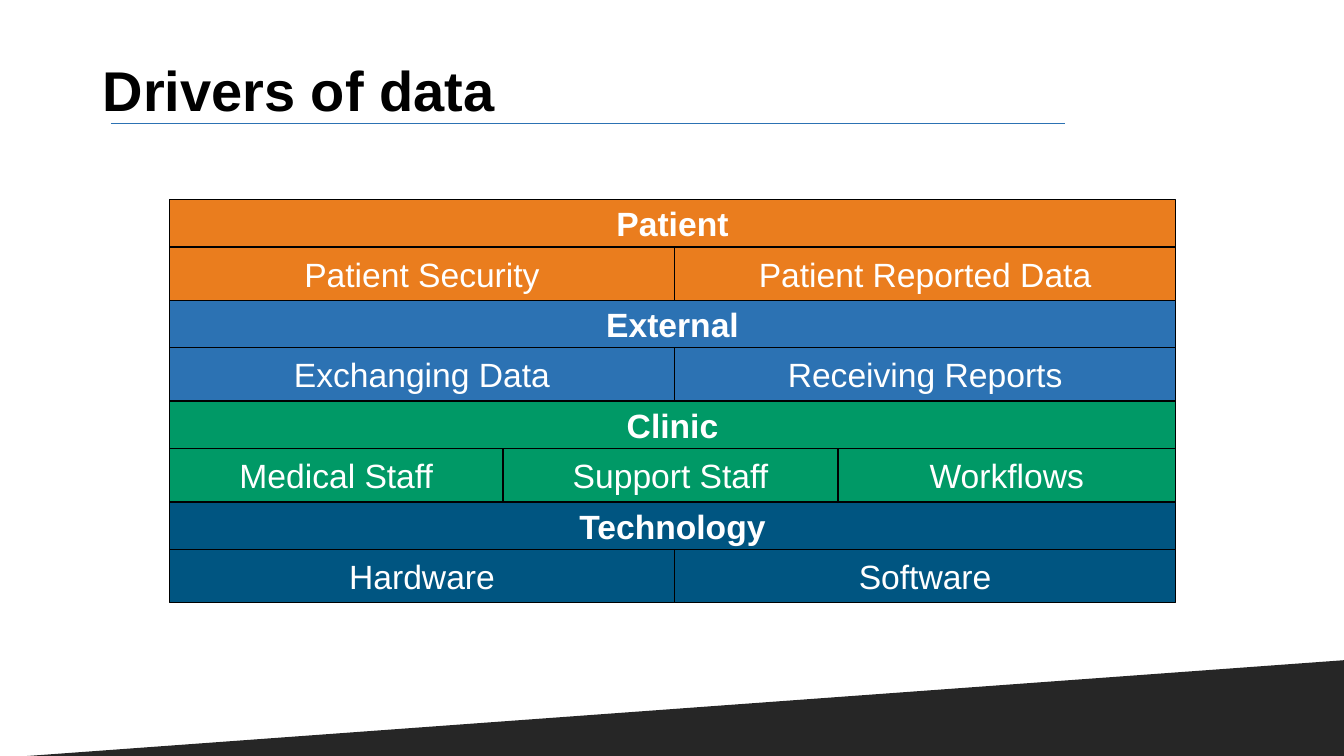
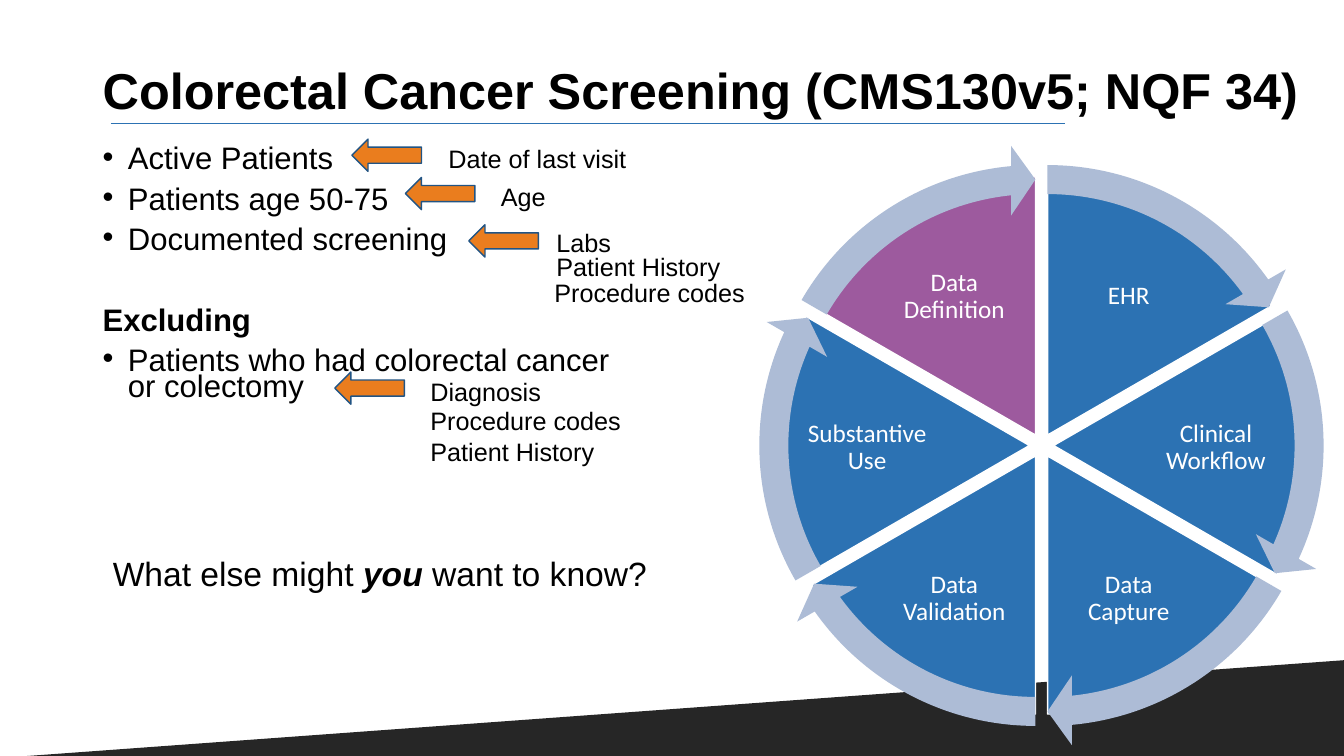
"""Build two slides on data drivers and colorectal cancer screening."""
from math import cos, radians, sin, tan

from lxml.etree import SubElement
from pptx import Presentation
from pptx.dml.color import RGBColor
from pptx.enum.shapes import MSO_CONNECTOR, MSO_SHAPE
from pptx.enum.text import MSO_ANCHOR, PP_ALIGN
from pptx.oxml.ns import qn
from pptx.util import Inches, Pt

BLACK = RGBColor(0x00, 0x00, 0x00)
WHITE = RGBColor(0xFF, 0xFF, 0xFF)
CHARCOAL = RGBColor(0x26, 0x26, 0x26)
ORANGE = RGBColor(0xEA, 0x7D, 0x1E)
BLUE = RGBColor(0x2C, 0x72, 0xB3)
GREEN = RGBColor(0x00, 0x99, 0x66)
NAVY = RGBColor(0x00, 0x55, 0x81)
PURPLE = RGBColor(0x9D, 0x5A, 0x9E)
PALE_BLUE = RGBColor(0xAD, 0xBC, 0xD6)
ARROW_EDGE = RGBColor(0x21, 0x54, 0x84)

NOTE = {"name": "Arial", "size": Pt(18)}
BODY = {"name": "Arial", "size": Pt(22.2)}
QUESTION = {"name": "Arial", "size": Pt(24)}
DRIVER = {"name": "Arial", "size": Pt(24)}
WEDGE = {"name": "Calibri", "size": Pt(18)}

WHEEL_RADIUS = 2.56
RIM_RADIUS = 2.88
COLUMN_EDGES = {
    1: [1.68, 11.66],
    2: [1.68, 6.69, 11.66],
    3: [1.68, 4.99, 8.31, 11.66],
}
DRIVERS = [
    ("Patient", ORANGE, ["Patient Security", "Patient Reported Data"]),
    ("External", BLUE, ["Exchanging Data", "Receiving Reports"]),
    ("Clinic", GREEN, ["Medical Staff", "Support Staff", "Workflows"]),
    ("Technology", NAVY, ["Hardware", "Software"]),
]
CRITERIA = [
    (["Active Patients"], True, 0),
    (["Patients age 50-75"], True, 10),
    (["Documented screening"], True, 10),
    (["Excluding"], False, 39.2),
    (["Patients who had colorectal cancer ", "or colectomy"], True, 10),
]
ARROWS = [(3.49, 1.38), (4.02, 1.76), (4.65, 2.23), (3.32, 3.69)]
SOURCES = [
    ("Date of last visit", 4.35, 1.37, 2.06),
    ("Age", 4.87, 1.75, 1.4),
    ("Labs", 5.42, 2.21, 1.4),
    ("Patient History", 5.42, 2.44, 2.01),
    ("Procedure codes", 5.4, 2.7, 2.23),
    ("Diagnosis", 4.17, 3.68, 1.4),
    ("Procedure codes", 4.17, 3.97, 2.14),
    ("Patient History", 4.17, 4.28, 1.91),
]
CYCLE = [
    ("EHR", BLUE),
    ("Clinical Workflow", BLUE),
    ("Data Capture", BLUE),
    ("Data Validation", BLUE),
    ("Substantive Use", BLUE),
    ("Data Definition", PURPLE),
]


def set_values(target, values):
    """Set each named value as an attribute of the target."""
    for name, value in values.items():
        setattr(target, name, value)


def write(paragraph, text, font, color=BLACK, **extra):
    """Add a formatted run to a paragraph."""
    run = paragraph.add_run()
    run.text = text
    set_values(run.font, {**font, **extra})
    run.font.color.rgb = color


def paint(shape, fill, edge=None):
    """Give a shape a flat fill and an optional one-point outline."""
    shape.shadow.inherit = False
    shape.fill.solid()
    shape.fill.fore_color.rgb = fill
    if edge is None:
        shape.line.fill.background()
    else:
        shape.line.color.rgb = edge
        shape.line.width = Pt(1)


def add_block(slide, kind, box, fill, edge=None):
    """Add a painted preset shape."""
    shape = slide.shapes.add_shape(kind, *map(Inches, box))
    paint(shape, fill, edge)
    return shape


def add_frame(slide, box, anchor=MSO_ANCHOR.TOP):
    """Add a wrapping text box and return its text frame."""
    frame = slide.shapes.add_textbox(*map(Inches, box)).text_frame
    set_values(frame, {"word_wrap": True, "vertical_anchor": anchor})
    return frame


def add_bullet(paragraph):
    """Give a paragraph a round bullet and a hanging indent."""
    properties = paragraph._p.get_or_add_pPr()
    properties.set("marL", str(Inches(0.25)))
    properties.set("indent", str(-Inches(0.25)))
    SubElement(properties, qn("a:buFont")).set("typeface", "Arial")
    SubElement(properties, qn("a:buChar")).set("char", "•")


def add_base_slide(deck, title, size, width):
    """Add a slide with the slanted band, title rule and title."""
    slide = deck.slides.add_slide(deck.slide_layouts[6])
    band = add_block(slide, MSO_SHAPE.RIGHT_TRIANGLE, (0, 6.55, 13.33, 0.97), CHARCOAL)
    band._element.spPr.get_or_add_xfrm().set("flipH", "1")
    rule = slide.shapes.add_connector(
        MSO_CONNECTOR.STRAIGHT, *map(Inches, (1.1, 1.22, 10.56, 1.22)))
    rule.line.color.rgb = BLUE
    rule.line.width = Pt(0.5)
    SubElement(rule._element.spPr, qn("a:effectLst"))
    heading = add_frame(slide, (0.92, 0.52, width, 0.81), MSO_ANCHOR.MIDDLE).paragraphs[0]
    heading.line_spacing = 0.9
    write(heading, title, {"name": "Arial", "size": Pt(size), "bold": True})
    return slide


def add_driver_row(slide, labels, top, height, fill, bold):
    """Add one row of the stack with a cell for each label."""
    edges = COLUMN_EDGES[len(labels)]
    for label, left, right in zip(labels, edges, edges[1:]):
        cell = add_block(slide, MSO_SHAPE.RECTANGLE,
                         (left, top, right - left, height), fill, BLACK)
        cell.text_frame.vertical_anchor = MSO_ANCHOR.MIDDLE
        paragraph = cell.text_frame.paragraphs[0]
        paragraph.alignment = PP_ALIGN.CENTER
        write(paragraph, label, DRIVER, WHITE, bold=bold)


def add_criteria(slide):
    """List who is included in and excluded from the measure."""
    frame = add_frame(slide, (0.92, 1.43, 11.5, 3.65))
    for index, (lines, bulleted, gap) in enumerate(CRITERIA):
        paragraph = frame.add_paragraph() if index else frame.paragraphs[0]
        if bulleted:
            add_bullet(paragraph)
        set_values(paragraph, {"line_spacing": 0.7, "space_before": Pt(gap)})
        set_values(paragraph.font, BODY)
        for number, line in enumerate(lines):
            if number:
                paragraph.add_line_break()
            write(paragraph, line, BODY, bold=not bulleted)


def add_sources(slide):
    """Point from the data sources to the criteria."""
    for left, top in ARROWS:
        add_block(slide, MSO_SHAPE.LEFT_ARROW, (left, top, 0.69, 0.32),
                  ORANGE, ARROW_EDGE)
    for name, left, top, width in SOURCES:
        frame = add_frame(slide, (left, top, width, 0.4))
        write(frame.paragraphs[0], name, NOTE)


def polar(center, radius, degrees):
    """Return the point at a radius and clockwise angle from a center."""
    angle = radians(degrees)
    return center[0] + radius * cos(angle), center[1] + radius * sin(angle)


def add_step(outline, tag, points):
    """Append a drawing step with its points to an outline."""
    step = SubElement(outline, qn(tag))
    for x, y in points:
        point = SubElement(step, qn("a:pt"))
        point.set("x", str(Inches(x)))
        point.set("y", str(Inches(y)))


def curve_wedge(wedge, center, middle):
    """Turn a triangle into a sector inside the square of its circle."""
    side = 2 * WHEEL_RADIUS
    set_values(wedge, {
        "left": Inches(center[0] - WHEEL_RADIUS),
        "top": Inches(center[1] - WHEEL_RADIUS),
        "width": Inches(side),
        "height": Inches(side),
    })
    hub = (WHEEL_RADIUS, WHEEL_RADIUS)
    reach = 4 / 3 * tan(radians(15))
    start, end = (polar(hub, WHEEL_RADIUS, middle + turn) for turn in (-30, 30))
    controls = [polar(start, reach * WHEEL_RADIUS, middle + 60),
                polar(end, reach * WHEEL_RADIUS, middle - 60)]
    outline = next(wedge._element.iter(qn("a:path")))
    for step in list(outline):
        outline.remove(step)
    outline.set("w", str(Inches(side)))
    outline.set("h", str(Inches(side)))
    add_step(outline, "a:moveTo", [start])
    add_step(outline, "a:cubicBezTo", [*controls, end])
    add_step(outline, "a:lnTo", [hub])
    add_step(outline, "a:close", [])


def add_wedge(slide, center, middle, label, fill):
    """Add a sixth of the wheel with its label."""
    corners = [polar(center, WHEEL_RADIUS, middle + turn) for turn in (-30, 30)]
    builder = slide.shapes.build_freeform(*map(Inches, center))
    builder.add_line_segments([tuple(map(Inches, corner)) for corner in corners])
    wedge = builder.convert_to_shape()
    curve_wedge(wedge, center, middle)
    paint(wedge, fill, WHITE)
    x, y = polar((WHEEL_RADIUS, WHEEL_RADIUS + 0.02), 1.61, middle)
    frame = wedge.text_frame
    set_values(frame, {
        "word_wrap": True,
        "vertical_anchor": MSO_ANCHOR.MIDDLE,
        "margin_left": Inches(x - 0.64),
        "margin_top": Inches(y - 0.49),
        "margin_right": Inches(2 * WHEEL_RADIUS - x - 0.64),
        "margin_bottom": Inches(2 * WHEEL_RADIUS - y - 0.49),
    })
    paragraph = frame.paragraphs[0]
    set_values(paragraph, {"alignment": PP_ALIGN.CENTER, "line_spacing": 0.9})
    write(paragraph, label, WEDGE, WHITE)


def add_rim_arrow(slide, center, middle):
    """Add the curved arrow around one wedge."""
    box = (center[0] - RIM_RADIUS, center[1] - RIM_RADIUS, 2 * RIM_RADIUS, 2 * RIM_RADIUS)
    arrow = add_block(slide, MSO_SHAPE.CIRCULAR_ARROW, box, PALE_BLUE)
    start = (middle - 30) % 360 * 0.6
    end = (start + 32.72) % 216
    for index, value in enumerate((0.05, 3.28, end, start, 0.06)):
        arrow.adjustments[index] = value


def add_cycle(slide):
    """Draw the wheel of wedges and the arrows around it."""
    middles = [60 * step - 60 for step in range(len(CYCLE))]
    centers = [polar((10.33, 4.42), 0.12, middle) for middle in middles]
    for center, middle, (label, fill) in zip(centers, middles, CYCLE):
        add_wedge(slide, center, middle, label, fill)
    for center, middle in zip(centers, middles):
        add_rim_arrow(slide, center, middle)


def build_drivers(deck):
    """Build the stack of data drivers."""
    slide = add_base_slide(deck, "Drivers of data", 40, 11.5)
    for level, (group, fill, parts) in enumerate(DRIVERS):
        top = 1.98 + level
        add_driver_row(slide, [group], top, 0.47, fill, True)
        add_driver_row(slide, parts, top + 0.47, 0.53, fill, False)


def build_screening(deck):
    """Build the screening criteria and the data cycle."""
    slide = add_base_slide(
        deck, "Colorectal Cancer Screening (CMS130v5; NQF 34)", 36, 12.23)
    add_criteria(slide)
    add_cycle(slide)
    add_sources(slide)
    question = add_frame(slide, (1.02, 5.44, 5.81, 0.5)).paragraphs[0]
    write(question, "What else might ", QUESTION)
    write(question, "you ", QUESTION, bold=True, italic=True)
    write(question, "want to know?", QUESTION)


def main():
    """Build and save the deck."""
    deck = Presentation()
    set_values(deck, {"slide_width": Inches(13.33), "slide_height": Inches(7.5)})
    build_drivers(deck)
    build_screening(deck)
    deck.save("out.pptx")


if __name__ == "__main__":
    main()
